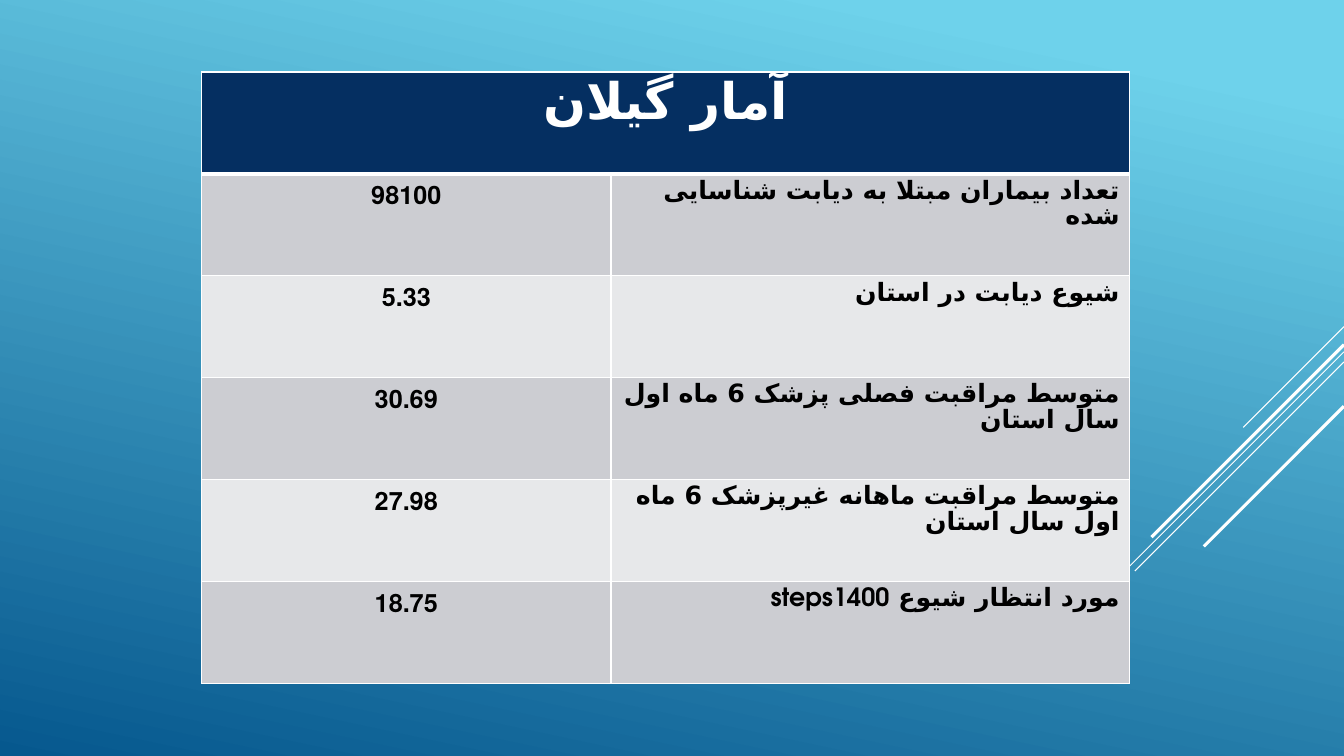
from lxml import etree
from pptx import Presentation
from pptx.dml.color import RGBColor
from pptx.enum import shapes, text
from pptx.oxml import ns
from pptx.util import Pt

FONT = "TeX Gyre Adventor"
SCRIPT = "DejaVu Sans"
DIGITS = "TeX Gyre Heros"
WHITE = "FFFFFF"
HEAD = "آمار گیلان"
ROWS = [
    ("98100", "تعداد بیماران مبتلا به دیابت شناسایی شده"),
    ("5.33", "شیوع دیابت در استان"),
    ("30.69", "متوسط مراقبت فصلی پزشک 6 ماه اول سال استان"),
    ("27.98", "متوسط مراقبت ماهانه غیرپزشک 6 ماه اول سال استان"),
    ("18.75", "مورد انتظار شیوع steps1400"),
]
BANDS = ("CCCDD2", "E7E8EA")
# Start height on the right edge, run to the lower left, line width
RAYS = [
    (233.3, 72, 0.75),
    (251.3, 234.7, 0.75),
    (258.5, 149.4, 0.75),
    (246.2, 137.5, 2.25),
    (290.2, 100.1, 2.25),
]


def color(code):
    return RGBColor.from_string(code)


def child(node, tag, **attrs):
    return etree.SubElement(node, ns.qn(tag), **attrs)


def paint_back(slide):
    fill = slide.background.fill
    fill.gradient()
    fill.gradient_angle = 258
    for stop, (place, code) in zip(fill.gradient_stops,
                                   [(0.1, "6ED2EB"), (1, "06588E")]):
        stop.position = place
        stop.color.rgb = color(code)


def draw_rays(slide, right):
    """Draw the 45 degree lines that fall from the right edge."""
    for top, run, width in RAYS:
        ray = slide.shapes.add_connector(
            shapes.MSO_CONNECTOR.STRAIGHT,
            Pt(right), Pt(top), Pt(right - run), Pt(top + run))
        ray.line.color.rgb = color(WHITE)
        ray.line.width = Pt(width)
        child(ray._element.spPr, "a:effectLst")


def set_edges(cell, top=1, bottom=1):
    props = cell._tc.get_or_add_tcPr()
    for side, width in zip("LRTB", (1, 1, top, bottom)):
        edge = child(props, f"a:ln{side}", w=str(Pt(width)))
        child(child(edge, "a:solidFill"), "a:srgbClr", val=WHITE)


def set_text(cell, words, size, ink, align, face, space):
    """Write right-to-left text; face is the complex script font."""
    cell.text = words
    para = cell.text_frame.paragraphs[0]
    para.alignment = align
    para.line_spacing = space
    para._p.get_or_add_pPr().set("rtl", "1")
    font = para.runs[0].font
    font.name = FONT
    font.size = Pt(size)
    font.bold = True
    font.color.rgb = color(ink)
    child(font._element, "a:cs", typeface=face)


def set_fill(cell, code):
    cell.fill.solid()
    cell.fill.fore_color.rgb = color(code)


def add_stats(slide, left, top, width, height):
    count = len(ROWS) + 1
    table = slide.shapes.add_table(
        count, 2, Pt(left), Pt(top), Pt(width), Pt(height)).table
    table.columns[0].width = Pt(width * 0.441)
    table.columns[1].width = Pt(width * 0.559)
    for row in table.rows:
        row.height = Pt(height / count)

    head = table.cell(0, 0)
    head.merge(table.cell(0, 1))
    for cell in table.rows[0].cells:
        set_edges(cell, bottom=3)
        set_fill(cell, "052F61")
    set_text(head, HEAD, 36, WHITE, text.PP_ALIGN.CENTER, SCRIPT, 0.9)

    styles = ((text.PP_ALIGN.CENTER, DIGITS, 0.9),
              (text.PP_ALIGN.RIGHT, SCRIPT, 0.86))
    for r, pair in enumerate(ROWS, 1):
        for c, words in enumerate(pair):
            cell = table.cell(r, c)
            set_edges(cell, top=3 if r == 1 else 1)
            set_fill(cell, BANDS[(r - 1) % 2])
            set_text(cell, words, 18, "000000", *styles[c])


def main():
    deck = Presentation()
    deck.slide_width, deck.slide_height = Pt(960), Pt(540)
    slide = deck.slides.add_slide(deck.slide_layouts[6])
    paint_back(slide)
    draw_rays(slide, 960)
    add_stats(slide, 144, 51.4, 663, 437)
    deck.save("out.pptx")


if __name__ == "__main__":
    main()
